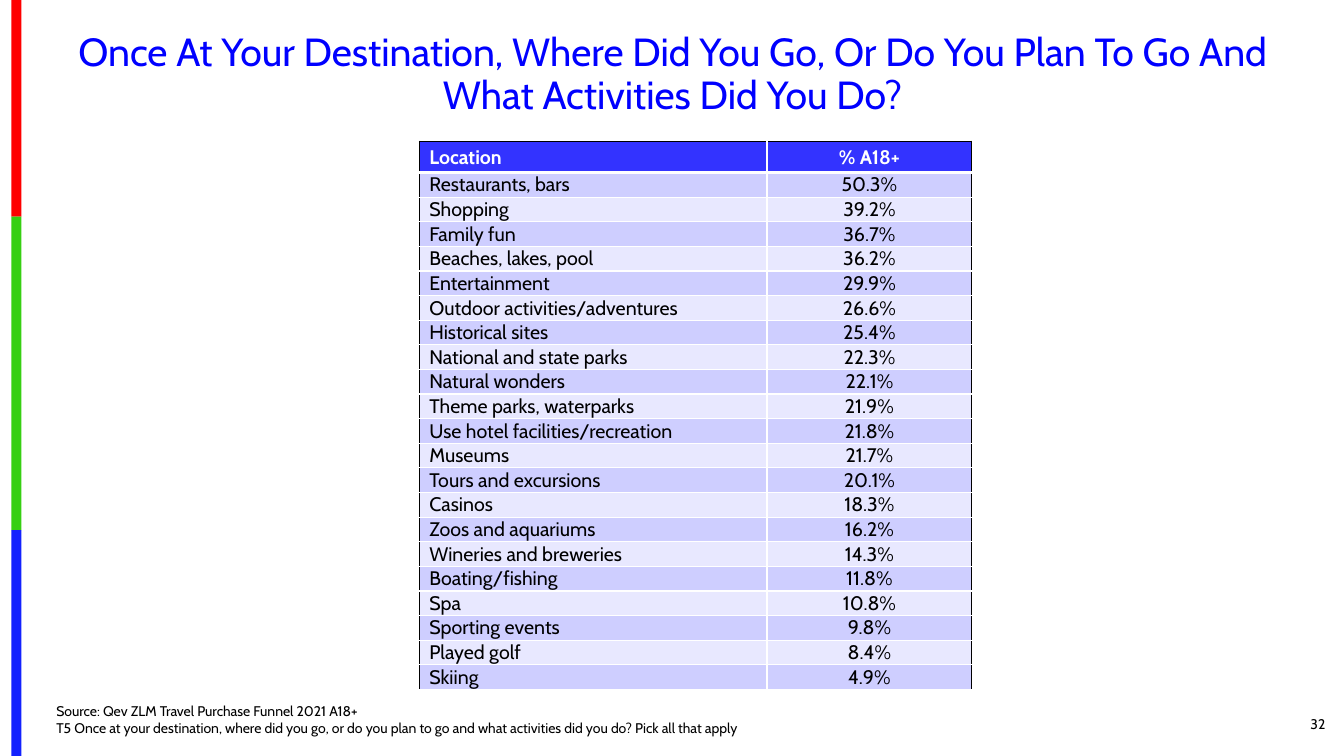
from lxml.etree import SubElement as Sub
from pptx import Presentation
from pptx.dml.color import RGBColor as Rgb
from pptx.enum.shapes import MSO_SHAPE as Shape
from pptx.enum.text import MSO_ANCHOR as Anchor, PP_ALIGN as Align
from pptx.oxml.ns import qn
from pptx.util import Cm, Pt

FONT = "Cabin"
BLACK, WHITE = "000000", "FFFFFF"
BARS = [("FE0000", 5.46), ("36CF12", 7.9), ("1322FE", 5.69)]
TITLE = ("Once At Your Destination, Where Did You Go, Or Do You Plan To Go And "
         "What Activities Did You Do?")
NOTES = ["Source: Qev ZLM Travel Purchase Funnel 2021 A18+",
         "T5 Once at your destination, where did you go, or do you plan to go "
         "and what activities did you do? Pick all that apply"]
ROWS = [
    ("Location", "% A18+"),
    ("Restaurants, bars", "50.3%"),
    ("Shopping", "39.2%"),
    ("Family fun", "36.7%"),
    ("Beaches, lakes, pool", "36.2%"),
    ("Entertainment", "29.9%"),
    ("Outdoor activities/adventures", "26.6%"),
    ("Historical sites", "25.4%"),
    ("National and state parks", "22.3%"),
    ("Natural wonders", "22.1%"),
    ("Theme parks, waterparks", "21.9%"),
    ("Use hotel facilities/recreation", "21.8%"),
    ("Museums", "21.7%"),
    ("Tours and excursions", "20.1%"),
    ("Casinos", "18.3%"),
    ("Zoos and aquariums", "16.2%"),
    ("Wineries and breweries", "14.3%"),
    ("Boating/fishing", "11.8%"),
    ("Spa", "10.8%"),
    ("Sporting events", "9.8%"),
    ("Played golf", "8.4%"),
    ("Skiing", "4.9%"),
]


def paint(target, color):
    target.solid()
    target.fore_color.rgb = Rgb.from_string(color)


def add_run(para, text, size, color, bold=False):
    run = para.add_run()
    run.text = text
    run.font.name, run.font.size, run.font.bold = FONT, Pt(size), bold
    paint(run.font.fill, color)


def add_bar(slide, top, height, color):
    bar = slide.shapes.add_shape(Shape.RECTANGLE, Cm(0.29), Cm(top), Cm(0.25), Cm(height))
    bar.shadow.inherit = False
    paint(bar.fill, color)
    bar.line.fill.background()


def set_title(slide):
    title = slide.shapes.title
    title.left, title.top, title.width, title.height = Cm(1.17), Cm(0.69), Cm(31.55), Cm(2.41)
    title.text_frame.vertical_anchor = Anchor.MIDDLE
    para = title.text_frame.paragraphs[0]
    para.alignment, para.line_spacing = Align.CENTER, 0.9
    add_run(para, TITLE, 28, "0000FF")


def add_text(slide, box, lines, align, anchor):
    frame = slide.shapes.add_textbox(*map(Cm, box)).text_frame
    frame.word_wrap, frame.vertical_anchor = True, anchor
    para = frame.paragraphs[0]
    para.alignment = align
    for i, line in enumerate(lines):
        if i:
            para.add_line_break()
        add_run(para, line, 10, BLACK)


def set_edges(cell, edges):
    props = cell._tc.get_or_add_tcPr()
    for i, (side, color, width) in enumerate(edges):
        line = Sub(props, qn(f"a:ln{side}"), w=str(Pt(width)))
        Sub(Sub(line, qn("a:solidFill")), qn("a:srgbClr"), val=color)
        props.insert(i, line)  # edges come before the fill


def fill_cell(cell, text, row, col):
    head = row == 0
    cell.vertical_anchor = Anchor.MIDDLE
    cell.margin_top = cell.margin_bottom = 0
    cell.margin_left = Cm(0.25 if head or col == 0 else 0.03)
    cell.margin_right = Cm(0.25 if head else 0.03)
    para = cell.text_frame.paragraphs[0]
    para.alignment = Align.CENTER if col else Align.LEFT
    add_run(para, text, 14, WHITE if head else BLACK, head)
    paint(cell.fill, "3333FF" if head else "CECEFF" if row % 2 else "E8E8FF")
    set_edges(cell, [("L", WHITE if col else BLACK, 1),
                     ("R", BLACK if col else WHITE, 1),
                     ("T", BLACK if head else WHITE, 3 if row == 1 else 1),
                     ("B", WHITE, 3 if head else 1)])


def add_grid(slide):
    high = [0.79] + [0.62] * (len(ROWS) - 1)
    table = slide.shapes.add_table(len(ROWS), 2, Cm(10.57), Cm(3.56),
                                   Cm(13.92), Cm(sum(high))).table
    for col, width in zip(table.columns, (8.76, 5.16)):
        col.width = Cm(width)
    for r, texts in enumerate(ROWS):
        table.rows[r].height = Cm(high[r])
        for c, text in enumerate(texts):
            fill_cell(table.cell(r, c), text, r, c)


def main():
    deck = Presentation()
    deck.slide_width, deck.slide_height = Cm(33.87), Cm(19.05)
    slide = deck.slides.add_slide(deck.slide_layouts[5])

    # Colour strip on the left edge
    top = 0
    for color, height in BARS:
        add_bar(slide, top, height, color)
        top += height

    # Title and table
    set_title(slide)
    add_grid(slide)

    # Page number and source
    add_text(slide, (30.91, 17.73, 2.74, 1.02), ["32"], Align.RIGHT, Anchor.MIDDLE)
    add_text(slide, (1.17, 17.58, 24, 1.02), NOTES, Align.LEFT, Anchor.TOP)
    deck.save("out.pptx")


if __name__ == "__main__":
    main()
